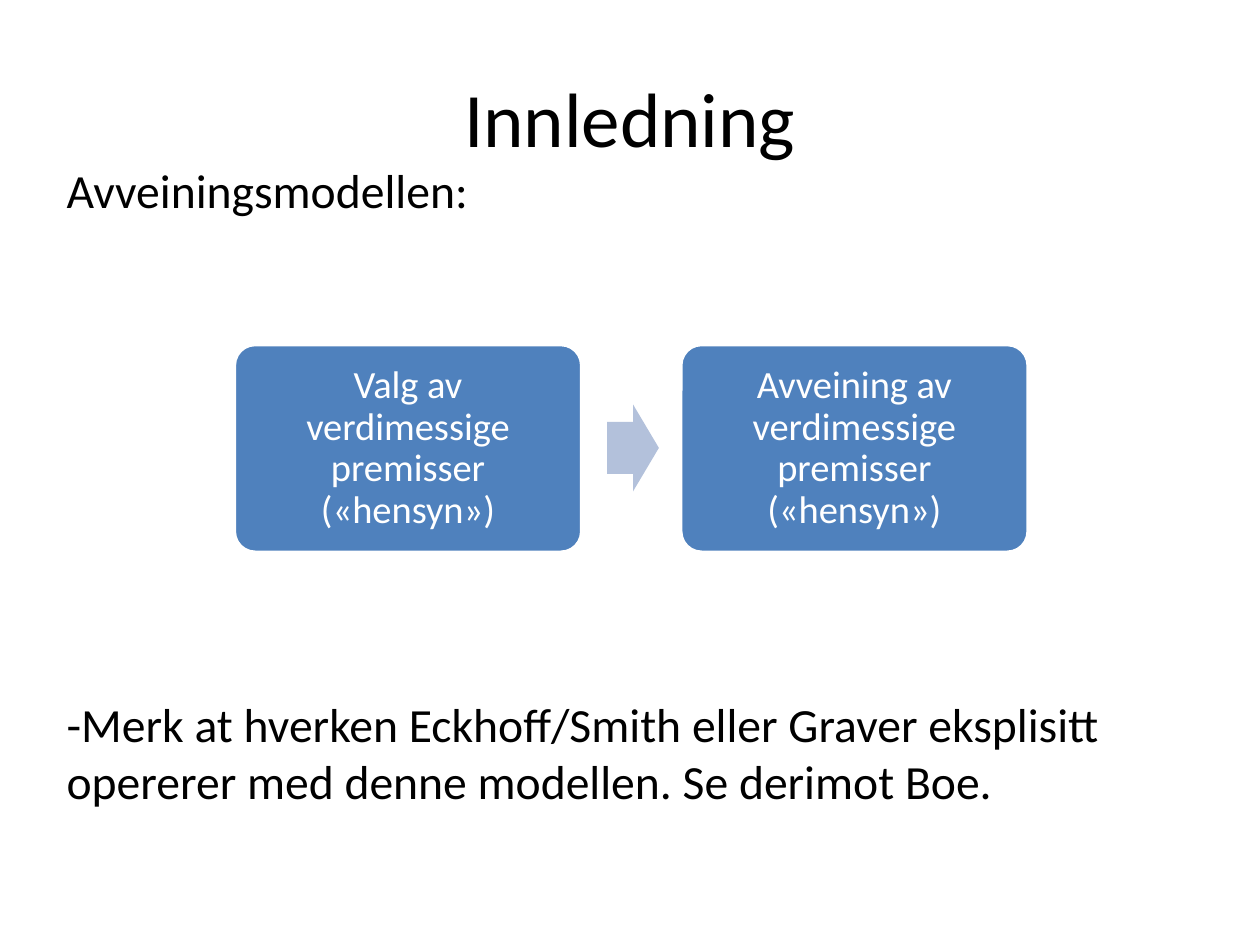
from dataclasses import dataclass

from pptx import Presentation
from pptx.dml.color import RGBColor
from pptx.enum import shapes, text
from pptx.util import Pt


@dataclass(frozen=True)
class Theme:
    font: str = "Calibri"
    ink: str = "000000"
    paper: str = "FFFFFF"
    step: str = "4F81BD"
    arrow: str = "B3C1DB"
    title_size: float = 44
    body_size: float = 27.2
    step_size: float = 22


@dataclass(frozen=True)
class Box:
    left: float
    top: float
    width: float
    height: float

    def lengths(self) -> tuple:
        return Pt(self.left), Pt(self.top), Pt(self.width), Pt(self.height)


THEME = Theme()
TITLE = Box(36, 21.6, 648, 90)
BODY = Box(31, 88.6, 648, 356.4)
FIRST_STEP = Box(133.9, 196.9, 198.5, 118.7)
ARROW = Box(347, 231.1, 29.5, 49.7)
STEP_PITCH = 255.1
DIAGRAM_GAP = 272

STEPS = [
    "Valg av verdimessige premisser («hensyn»)",
    "Avveining av verdimessige premisser («hensyn»)",
]
PARAGRAPHS = [
    "Avveiningsmodellen:",
    "-Merk at hverken Eckhoff/Smith eller Graver eksplisitt "
    "opererer med denne modellen. Se derimot Boe.",
]


def style(p, size: float, color: str, align) -> None:
    p.alignment = align
    p.font.name = THEME.font
    p.font.size = Pt(size)
    p.font.color.rgb = RGBColor.from_string(color)


def add_text(slide, box: Box, lines: list[str], size: float, align, anchor, gap: float = 0) -> None:
    """Add a text box whose paragraphs are gap points apart."""
    tf = slide.shapes.add_textbox(*box.lengths()).text_frame
    tf.word_wrap = True
    tf.vertical_anchor = anchor
    tf.text = "\n".join(lines)
    for i, p in enumerate(tf.paragraphs):
        style(p, size, THEME.ink, align)
        p.space_before = Pt(gap if i else 0)


def add_filled(slide, kind, box: Box, color: str, adjustments: list[float]):
    sp = slide.shapes.add_shape(kind, *box.lengths())
    sp.shadow.inherit = False
    sp.fill.solid()
    sp.fill.fore_color.rgb = RGBColor.from_string(color)
    sp.line.fill.background()
    for i, value in enumerate(adjustments):
        sp.adjustments[i] = value
    return sp


def add_step(slide, box: Box, label: str) -> None:
    sp = add_filled(slide, shapes.MSO_SHAPE.ROUNDED_RECTANGLE, box, THEME.step, [0.1])
    sp.line.color.rgb = RGBColor.from_string(THEME.paper)
    sp.line.width = Pt(2)
    tf = sp.text_frame
    tf.word_wrap = True
    tf.vertical_anchor = text.MSO_ANCHOR.MIDDLE
    tf.margin_left = tf.margin_right = tf.margin_top = tf.margin_bottom = Pt(6.6)
    tf.text = label
    p = tf.paragraphs[0]
    style(p, THEME.step_size, THEME.paper, text.PP_ALIGN.CENTER)
    p.line_spacing = 0.9


def main() -> None:
    prs = Presentation()
    prs.slide_width, prs.slide_height = Pt(720), Pt(540)
    slide = prs.slides.add_slide(prs.slide_layouts[6])

    add_text(slide, TITLE, ["Innledning"], THEME.title_size,
             text.PP_ALIGN.CENTER, text.MSO_ANCHOR.MIDDLE)
    add_text(slide, BODY, PARAGRAPHS, THEME.body_size,
             text.PP_ALIGN.LEFT, text.MSO_ANCHOR.TOP, DIAGRAM_GAP)
    for i, label in enumerate(STEPS):
        box = Box(FIRST_STEP.left + i * STEP_PITCH, FIRST_STEP.top,
                  FIRST_STEP.width, FIRST_STEP.height)
        add_step(slide, box, label)
    add_filled(slide, shapes.MSO_SHAPE.RIGHT_ARROW, ARROW, THEME.arrow, [0.6, 0.5])

    prs.save("out.pptx")


if __name__ == "__main__":
    main()
